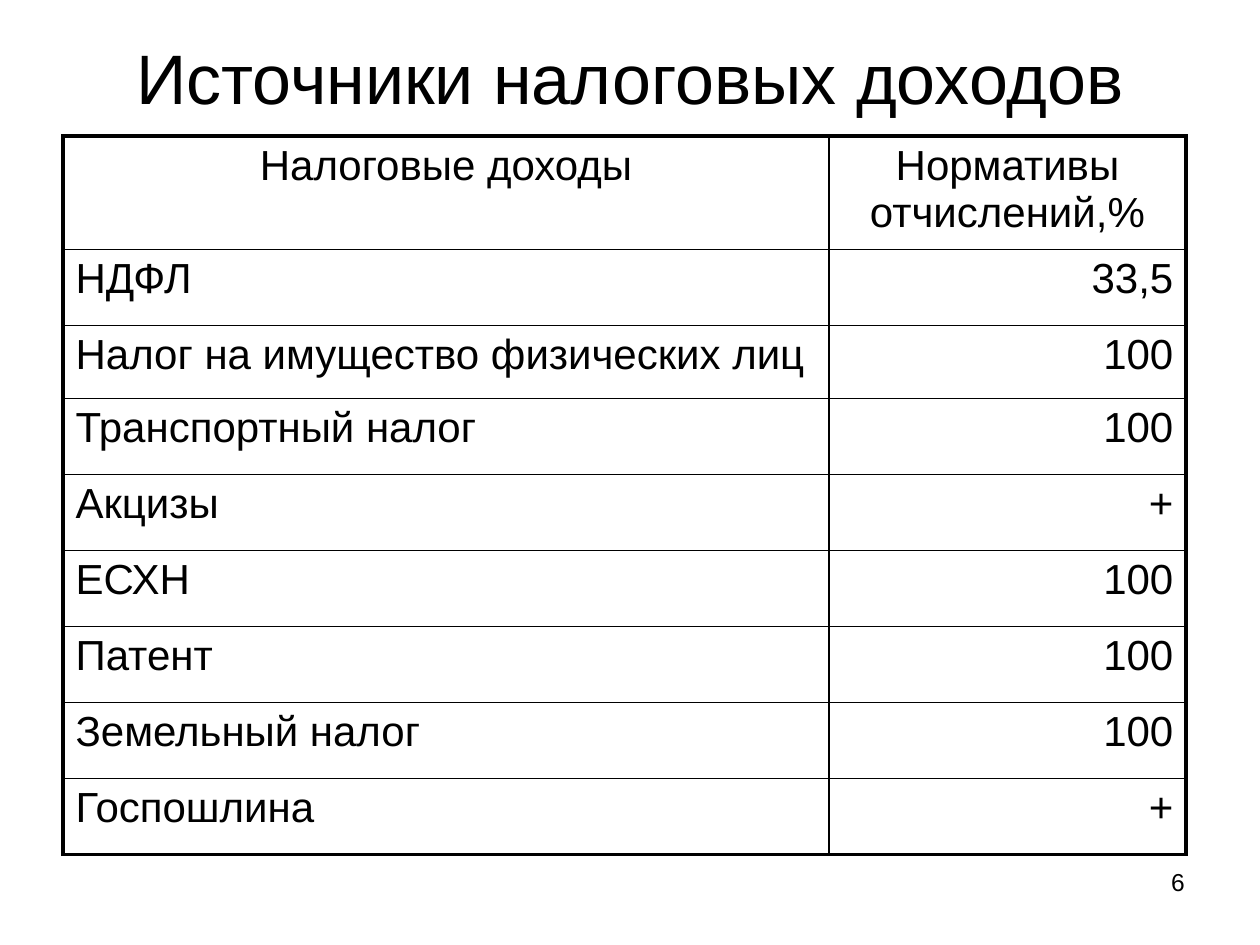
from lxml.etree import SubElement
from pptx import Presentation
from pptx.dml.color import RGBColor
from pptx.enum.text import MSO_ANCHOR, PP_ALIGN
from pptx.oxml.ns import qn
from pptx.util import Emu, Pt

PX_PER_INCH = 126
BLACK = "000000"
THIN, THICK = 1, 2.25

HEADER = ("Налоговые доходы", "Нормативы отчислений,%")
TAXES = [
    ("НДФЛ", "33,5"),
    ("Налог на имущество физических лиц", "100"),
    ("Транспортный налог", "100"),
    ("Акцизы", "+"),
    ("ЕСХН", "100"),
    ("Патент", "100"),
    ("Земельный налог", "100"),
    ("Госпошлина", "+"),
]
COLUMN_WIDTHS = (766, 357)
ROW_HEIGHTS = [110, 76, 73] + [76] * 6


def px(length):
    return Emu(round(length * 914400 / PX_PER_INCH))


def color(value):
    return RGBColor.from_string(value)


def write(frame, text, size=24, align=PP_ALIGN.LEFT, font="Arial", fill=BLACK):
    para = frame.paragraphs[0]
    para.alignment = align
    span = para.add_run()
    span.text = text
    span.font.name = font
    span.font.size = Pt(size)
    span.font.color.rgb = color(fill)


def set_borders(cell, **widths):
    """Draw solid cell borders; widths in points are keyed L, R, T, B."""
    properties = cell._tc.get_or_add_tcPr()
    for index, (side, width) in enumerate(widths.items()):
        line = SubElement(properties, qn(f"a:ln{side}"), w=str(Pt(width)))
        properties.insert(index, line)
        solid = SubElement(line, qn("a:solidFill"))
        SubElement(solid, qn("a:srgbClr"), val=BLACK)


class SlideBuilder:
    """Holds the current page and adds its elements."""

    def __init__(self, page):
        self.page = page

    def place(self, shape, left, top, width, height):
        shape.left, shape.top = px(left), px(top)
        shape.width, shape.height = px(width), px(height)

    def title(self, text, *area):
        title = self.page.shapes.title
        self.place(title, *area)
        title.text_frame.vertical_anchor = MSO_ANCHOR.MIDDLE
        write(title.text_frame, text, size=40, align=PP_ALIGN.CENTER)

    def text(self, text, *area, **style):
        box = self.page.shapes.add_textbox(*map(px, area))
        box.text_frame.word_wrap = True
        write(box.text_frame, text, **style)

    def table(self, rows, left, top):
        area = (left, top, sum(COLUMN_WIDTHS), sum(ROW_HEIGHTS))
        table = self.page.shapes.add_table(
            len(rows), len(COLUMN_WIDTHS), *map(px, area)).table
        table.first_row = table.horz_banding = False
        for column, width in zip(table.columns, COLUMN_WIDTHS):
            column.width = px(width)
        for row, height in zip(table.rows, ROW_HEIGHTS):
            row.height = px(height)
        last_row, last_column = len(rows) - 1, len(COLUMN_WIDTHS) - 1
        for r, values in enumerate(rows):
            for c, value in enumerate(values):
                cell = table.cell(r, c)
                cell.fill.background()
                if r == 0:
                    align = PP_ALIGN.CENTER
                else:
                    align = PP_ALIGN.RIGHT if c else PP_ALIGN.LEFT
                write(cell.text_frame, value, align=align)
                set_borders(
                    cell,
                    L=THICK if c == 0 else THIN,
                    R=THICK if c == last_column else THIN,
                    T=THICK if r == 0 else THIN,
                    B=THICK if r == last_row else THIN,
                )


def main():
    deck = Presentation()
    deck.slide_width, deck.slide_height = px(1260), px(945)
    page = deck.slides.add_slide(deck.slide_layouts[5])
    builder = SlideBuilder(page)
    builder.text("6", 903, 861, 294, 66, size=14, align=PP_ALIGN.RIGHT)
    builder.title("Источники налоговых доходов", 63, 38, 1134, 78)
    builder.table([HEADER, *TAXES], 63, 136)
    deck.save("out.pptx")


if __name__ == "__main__":
    main()
